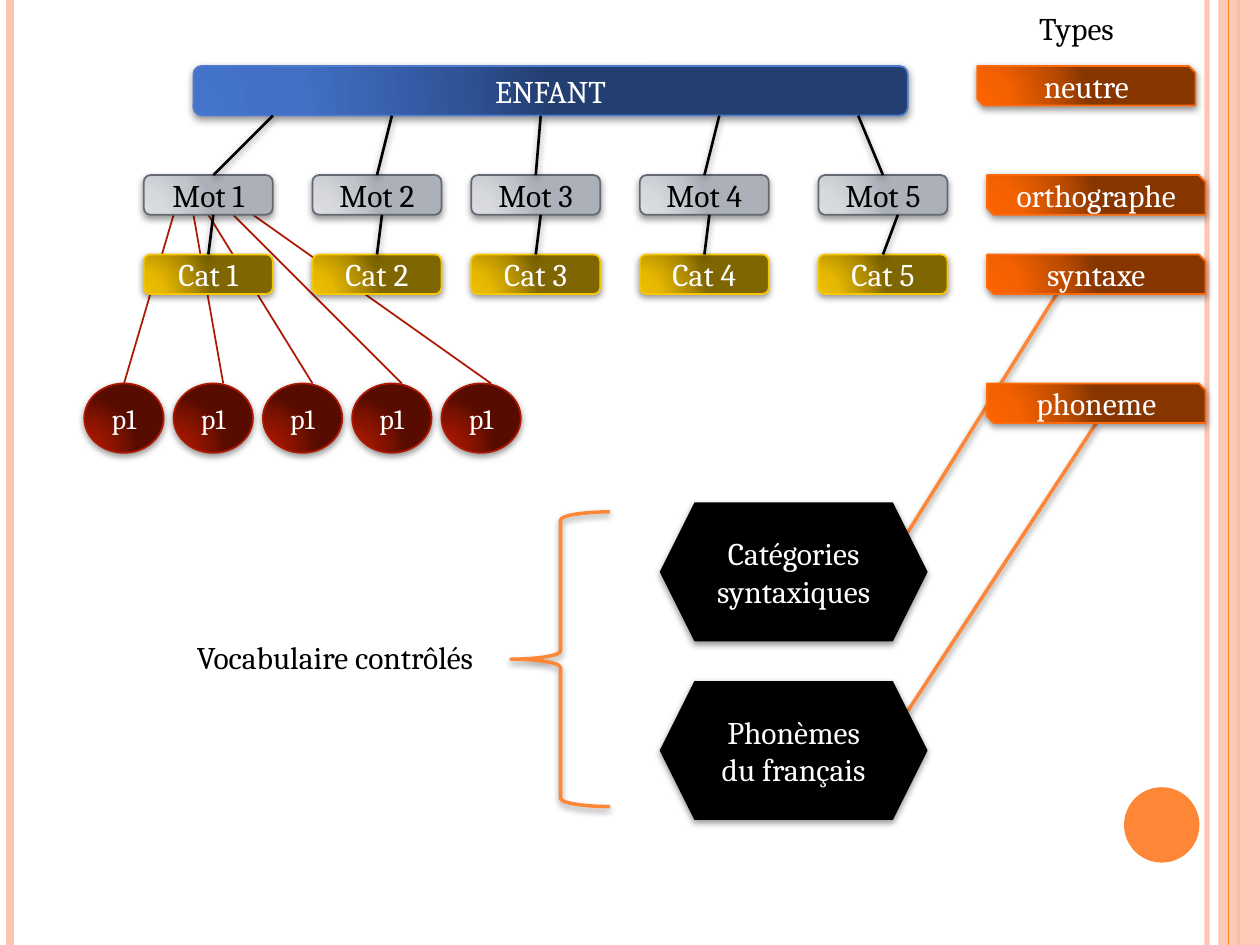
from lxml import etree
from pptx import Presentation
from pptx.dml.color import RGBColor
from pptx.enum.shapes import MSO_CONNECTOR, MSO_SHAPE
from pptx.enum.text import MSO_ANCHOR, PP_ALIGN
from pptx.oxml.ns import qn
from pptx.util import Cm, Pt

ROUND, SNIP = MSO_SHAPE.ROUNDED_RECTANGLE, MSO_SHAPE.SNIP_2_DIAG_RECTANGLE
OVAL, HEXAGON = MSO_SHAPE.OVAL, MSO_SHAPE.HEXAGON
RECT, BRACE = MSO_SHAPE.RECTANGLE, MSO_SHAPE.LEFT_BRACE
STRAIGHT = MSO_CONNECTOR.STRAIGHT
CENTER, LEFT = PP_ALIGN.CENTER, PP_ALIGN.LEFT
MIDDLE = MSO_ANCHOR.MIDDLE
TOP_SIDE, BOTTOM_SIDE = 0, 2

COLORS = {"black": "000000", "white": "FFFFFF", "orange": "FE8637",
          "peach": "FEC3AE", "red": "AC1800", "blue": "4F7CCF",
          "gray": "636A74", "gold": "F8C700", "rust": "FF6B0A"}
GRADIENTS = {"blue": ("4574CC", "4370C5", "2F5397", "233E70"),
             "gray": ("DADCE0", "D7D9DD", "C1C5CB", "ABB0B9"),
             "rust": ("FD6400", "F46100", "B74900", "873600"),
             "gold": ("EDBE00", "E5B700", "AC8900", "7F6600"),
             "red": ("A41700", "9F1600", "771100", "580C00")}
STOPS = (0, 30, 75, 100)
BOX_SHADOW, LINE_SHADOW = (42, 1.6), (40, 2)  # opacity %, distance in points


def color(name):
    return RGBColor.from_string(COLORS[name])


def add_xml(parent, tag, **attributes):
    values = {key: str(value) for key, value in attributes.items()}
    return etree.SubElement(parent, qn(tag), values)


def write(frame, text, size=18, ink="white", align=CENTER, font="Cambria"):
    for index, line in enumerate(text.split("\n")):
        para = frame.add_paragraph() if index else frame.paragraphs[0]
        para.alignment = align
        span = para.add_run()
        span.text = line
        span.font.size, span.font.name = Pt(size), font
        span.font.color.rgb = color(ink)


class Diagram:
    def __init__(self, page):
        self.page = page

    def shadow(self, effects, style):
        opacity, distance = style
        outer = add_xml(effects, "a:outerShdw", blurRad=Pt(4), dist=Pt(distance),
                        dir=5400000, rotWithShape=0)
        shade = add_xml(outer, "a:srgbClr", val=COLORS["black"])
        add_xml(shade, "a:alpha", val=opacity * 1000)

    def fade(self, item, opacity):
        shade = item._element.spPr.find(".//" + qn("a:srgbClr"))
        add_xml(shade, "a:alpha", val=opacity * 1000)

    def gradient(self, box, name):
        fill = add_xml(box._element.spPr, "a:gradFill", rotWithShape=1)
        stops = add_xml(fill, "a:gsLst")
        for place, shade in zip(STOPS, GRADIENTS[name]):
            stop = add_xml(stops, "a:gs", pos=place * 1000)
            add_xml(stop, "a:srgbClr", val=shade)
        path = add_xml(fill, "a:path", path="circle")
        add_xml(path, "a:fillToRect", l=5000, t=100000, r=120000, b=10000)

    def shape(self, kind, left, top, width, height, text="", fill=None,
              gradient=None, line=None, weight=1, shadow=None, **style):
        box = self.page.shapes.add_shape(
            kind, Cm(left), Cm(top), Cm(width), Cm(height))
        if gradient:
            self.gradient(box, gradient)
            line = gradient
        elif fill:
            box.fill.solid()
            box.fill.fore_color.rgb = color(fill)
        else:
            box.fill.background()
        if line:
            box.line.color.rgb = color(line)
            box.line.width = Pt(weight)
        else:
            box.line.fill.background()
        box.shadow.inherit = False
        if shadow:
            self.shadow(box._element.spPr.find(qn("a:effectLst")), shadow)
        if text:
            box.text_frame.vertical_anchor = MIDDLE
            write(box.text_frame, text, **style)
        return box

    def label(self, left, top, width, height, text, **style):
        box = self.page.shapes.add_textbox(
            Cm(left), Cm(top), Cm(width), Cm(height))
        box.text_frame.word_wrap = False
        write(box.text_frame, text, ink="black", **style)

    def line(self, x1, y1, x2, y2, ink, weight, shadow=None):
        link = self.page.shapes.add_connector(
            STRAIGHT, Cm(x1), Cm(y1), Cm(x2), Cm(y2))
        link.line.color.rgb = color(ink)
        link.line.width = Pt(weight)
        effects = add_xml(link._element.spPr, "a:effectLst")
        if shadow:
            self.shadow(effects, shadow)
        return link


def main():
    deck = Presentation()
    deck.slide_width, deck.slide_height = Cm(25.4), Cm(19.05)
    diagram = Diagram(deck.slides.add_slide(deck.slide_layouts[6]))

    # Side decoration
    def stripe(x, ink, weight):
        return diagram.line(x, 0, x, 19.05, ink, weight)

    diagram.fade(stripe(24.33, "peach", 3), 93)
    stripe(0.2, "peach", 4.5)
    stripe(24.97, "orange", 1.5)
    band = diagram.shape(RECT, 24.56, 0, 0.84, 19.05, fill="peach")
    diagram.fade(band, 87)
    stripe(24.77, "orange", 0.75)
    diagram.shape(OVAL, 22.66, 15.87, 1.52, 1.52, fill="orange")

    # Rows and columns of the tree
    bar_top, word_top, category_top, phoneme_top = 1.33, 3.53, 5.13, 7.73
    columns = (2.9, 6.3, 9.5, 12.9, 16.5)
    width, height = 2.6, 0.8
    bar_bottom, word_bottom = bar_top + 1, word_top + height

    # Links behind the boxes
    diagram.line(18.3, 14.33, 22.1, phoneme_top + height, "orange", 2, LINE_SHADOW)
    diagram.line(18.3, 10.73, 21.3, category_top + height, "orange", 2, LINE_SHADOW)
    sound_links = [
        diagram.line(start, word_bottom, end, phoneme_top, "red", 1)
        for start, end in zip((3.5, 3.9, 4.2, 4.7, 5.1), (2.5, 4.5, 6.3, 8.1, 9.9))]

    # Child, words, categories and phonemes
    diagram.shape(ROUND, 3.9, bar_top, 14.4, 1, "ENFANT",
                  gradient="blue", shadow=BOX_SHADOW)
    words = [diagram.shape(ROUND, left, word_top, width, height, f"Mot {number}",
                           gradient="gray", shadow=LINE_SHADOW, ink="black")
             for number, left in enumerate(columns, 1)]
    categories = [diagram.shape(ROUND, left, category_top, width, height,
                                f"Cat {number}", gradient="gold", shadow=BOX_SHADOW)
                  for number, left in enumerate(columns, 1)]
    sounds = [diagram.shape(OVAL, 1.7 + 1.8 * index, phoneme_top, 1.6, 1.4, "p1",
                            gradient="red", shadow=BOX_SHADOW, size=16)
              for index in range(5)]
    sound_links[0].end_connect(sounds[0], TOP_SIDE)
    sound_links[2].begin_connect(words[0], BOTTOM_SIDE)

    # Types
    for text, left, top in (("neutre", 19.7, bar_top), ("orthographe", 19.9, word_top),
                            ("syntaxe", 19.9, category_top),
                            ("phoneme", 19.9, phoneme_top)):
        diagram.shape(SNIP, left, top, 4.4, height, text,
                      gradient="rust", shadow=BOX_SHADOW)

    # Links from child to words; the first ends beside the middle of its box
    bar_starts = (5.5, 7.9, 10.9, 14.5, 17.3)
    word_ends = (4.3, 7.6, 10.8, 14.2, 17.8)
    for index, (start, end) in enumerate(zip(bar_starts, word_ends)):
        link = diagram.line(start, bar_bottom, end, word_top, "black", 1.5, LINE_SHADOW)
        if index:
            link.end_connect(words[index], TOP_SIDE)

    # Links from words to categories
    for start, category in zip((4.3, 7.7, 10.9, 14.3, 18.1), categories):
        link = diagram.line(start, word_bottom, start, category_top,
                            "black", 1.5, LINE_SHADOW)
        link.end_connect(category, TOP_SIDE)

    # Controlled vocabularies
    for top, text in ((10.13, "Catégories\nsyntaxiques"),
                      (13.73, "Phonèmes\ndu français")):
        diagram.shape(HEXAGON, 13.3, top, 5.4, 2.8, text,
                      fill="black", shadow=BOX_SHADOW)
    diagram.shape(BRACE, 10.3, 10.32, 2, 5.94, line="orange", weight=2,
                  shadow=LINE_SHADOW)
    diagram.label(3.3, 12.73, 6.91, 1.02, "Vocabulaire contrôlés")
    diagram.label(20.7, 0.05, 2.26, 1.02, "Types", align=LEFT)

    deck.save("out.pptx")


if __name__ == "__main__":
    main()
